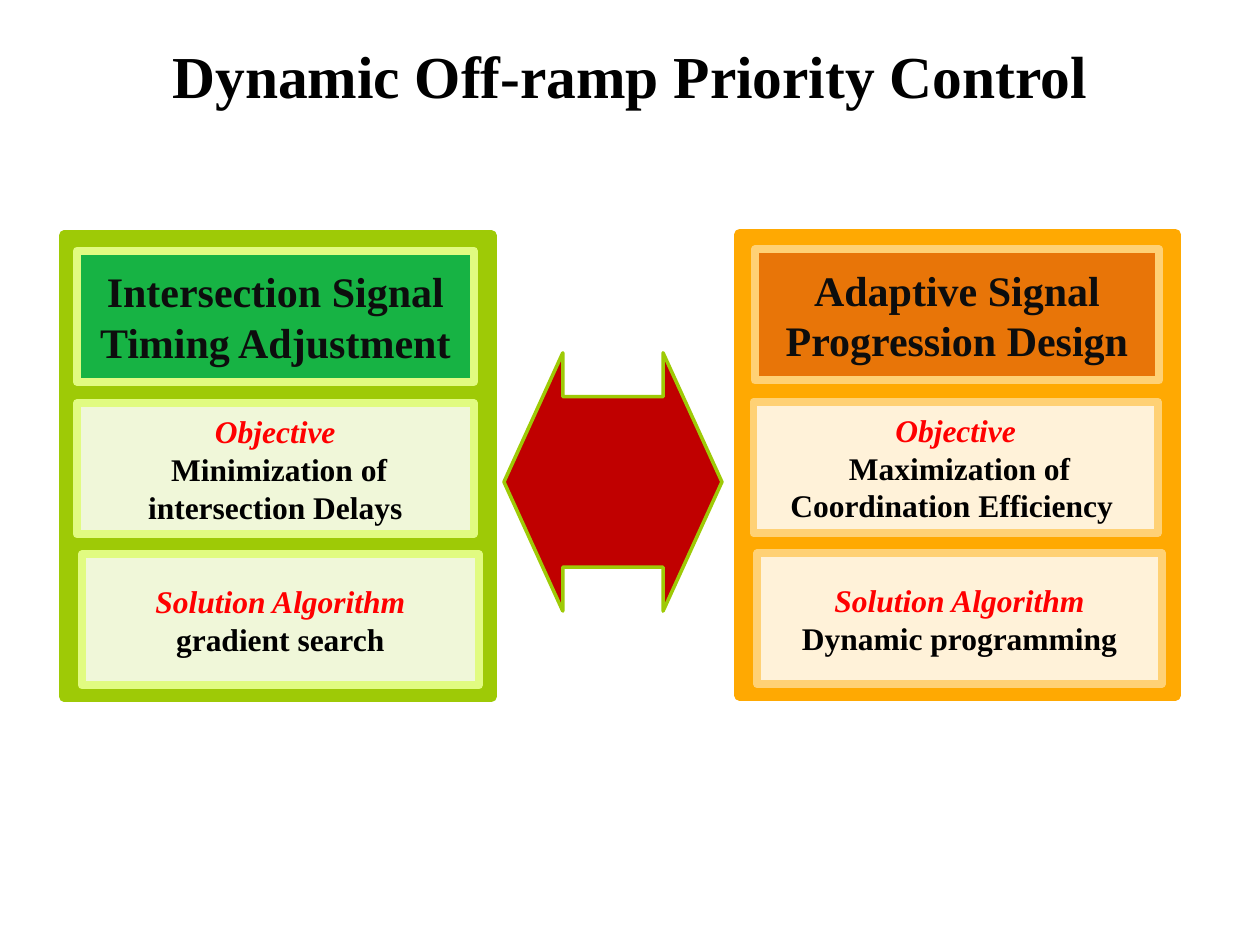
"""Build the Dynamic Off-ramp Priority Control slide."""
import pptx
import pptx.dml.color
import pptx.enum.shapes
import pptx.enum.text
import pptx.oxml
import pptx.oxml.ns
import pptx.util

Inches = pptx.util.Inches
COLORS = {
    "black": "000000", "ink": "0D0D0D", "red": "FF0000", "white": "FFFFFF",
    "lime": "9ECA06", "pale lime": "E1FB81", "green": "00B050",
    "amber": "FFA902", "pale amber": "FFD175", "orange": "E46C0A",
    "crimson": "C00000",
}
FORMATS = {
    "title": ({"size": pptx.util.Pt(34), "bold": True}, "black"),
    "heading": ({"size": pptx.util.Pt(24), "bold": True}, "ink"),
    "label": ({"size": pptx.util.Pt(18), "bold": True, "italic": True}, "red"),
    "detail": ({"size": pptx.util.Pt(18), "bold": True, "italic": False}, "black"),
}
TITLE = "Dynamic Off-ramp Priority Control"
PANELS = [
    {
        "at": (0.51, 1.87, 3.39, 3.66), "frame": "lime", "border": "pale lime",
        "heading fill": "green", "card width": 3.15, "card lefts": (0.61, 0.61, 0.65),
        "cards": [
            [("heading", "Intersection Signal Timing Adjustment")],
            [("label", "Objective"), ("detail", " Minimization of intersection Delays")],
            [("label", "Solution Algorithm"), ("detail", "gradient search")],
        ],
    },
    {
        "at": (5.87, 1.86, 3.46, 3.66), "frame": "amber", "border": "pale amber",
        "heading fill": "orange", "card width": 3.21, "card lefts": (5.99, 5.98, 6.01),
        "cards": [
            [("heading", "Adaptive Signal Progression Design")],
            [("label", "Objective"), ("detail", " Maximization of Coordination Efficiency ")],
            [("label", "Solution Algorithm"), ("detail", "Dynamic programming")],
        ],
    },
]
CARD_OFFSETS = (0.12, 1.33, 2.53)
CARD_HEIGHT = 1.04
CARD_OPACITY = 85


def rgb(name):
    return pptx.dml.color.RGBColor.from_string(COLORS[name])


def write(shape, lines):
    frame = shape.text_frame
    frame.word_wrap = True
    frame.vertical_anchor = pptx.enum.text.MSO_ANCHOR.MIDDLE
    for index, (role, text) in enumerate(lines):
        paragraph = frame.add_paragraph() if index else frame.paragraphs[0]
        paragraph.alignment = pptx.enum.text.PP_ALIGN.CENTER
        run = paragraph.add_run()
        run.text = text
        values, color = FORMATS[role]
        for key, value in values.items():
            setattr(run.font, key, value)
        run.font.name = "Times New Roman"
        run.font.color.rgb = rgb(color)


def add_block(shapes, kind, at, fill, border, weight, opacity=100):
    block = shapes.add_shape(kind, *map(Inches, at))
    block.shadow.inherit = False
    block.fill.solid()
    block.fill.fore_color.rgb = rgb(fill)
    block.line.color.rgb = rgb(border)
    block.line.width = pptx.util.Pt(weight)
    if opacity < 100:
        qn = pptx.oxml.ns.qn
        tint = block.element.spPr.find(qn("a:solidFill")).find(qn("a:srgbClr"))
        alpha = pptx.oxml.parse_xml(
            f'<a:alpha {pptx.oxml.ns.nsdecls("a")} val="{opacity * 1000}"/>')
        tint.append(alpha)
    return block


def add_panel(slide, panel):
    rectangle = pptx.enum.shapes.MSO_SHAPE.RECTANGLE
    group = slide.shapes.add_group_shape()
    add_block(group.shapes, rectangle, panel["at"], panel["frame"], panel["frame"], 6)
    top = panel["at"][1]
    for index, lines in enumerate(panel["cards"]):
        at = (panel["card lefts"][index], top + CARD_OFFSETS[index],
              panel["card width"], CARD_HEIGHT)
        fill = "white" if index else panel["heading fill"]
        card = add_block(group.shapes, rectangle, at, fill, panel["border"], 4.5,
                         CARD_OPACITY)
        write(card, lines)


def main():
    deck = pptx.Presentation()
    deck.slide_width, deck.slide_height = Inches(10), Inches(7.5)
    slide = deck.slides.add_slide(deck.slide_layouts[6])
    title = slide.shapes.add_textbox(*map(Inches, (0.5, -0.03, 9, 1.25)))
    write(title, [("title", TITLE)])
    for panel in PANELS:
        add_panel(slide, panel)
    exchange = add_block(slide.shapes, pptx.enum.shapes.MSO_SHAPE.LEFT_RIGHT_ARROW,
                         (4, 2.8, 1.73, 2.05), "crimson", "lime", 2)
    exchange.adjustments[0] = 0.66
    exchange.adjustments[1] = 0.27
    deck.save("out.pptx")


if __name__ == "__main__":
    main()
